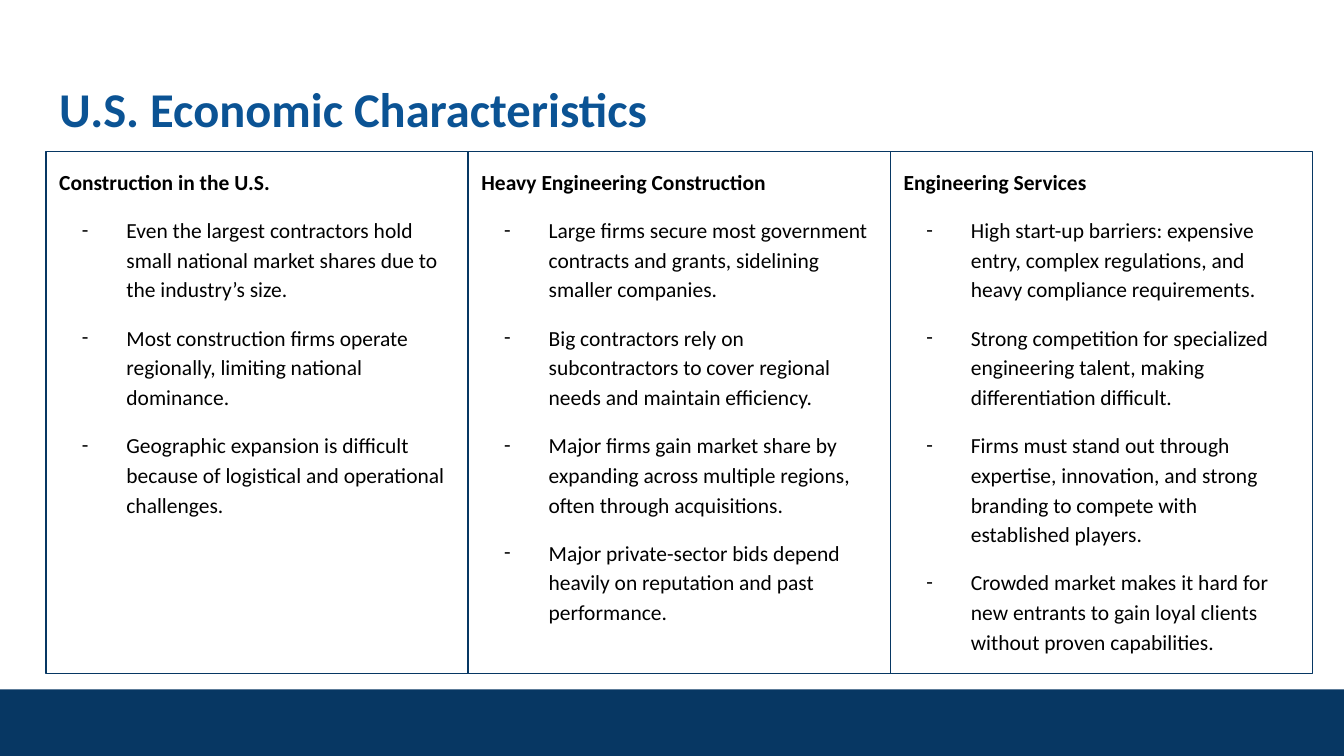
from lxml.etree import SubElement
from pptx import Presentation
from pptx.dml.color import RGBColor
from pptx.enum.shapes import MSO_SHAPE
from pptx.enum.text import MSO_ANCHOR
from pptx.oxml.ns import qn
from pptx.util import Cm, Pt

COLORS = {"title": "0B5394", "navy": "073763", "text": "000000"}
FONT = "Calibri"

COLUMNS = [
    ("Construction in the U.S.", [
        "Even the largest contractors hold small national market shares due to the industry’s size.",
        "Most construction firms operate regionally, limiting national dominance.",
        "Geographic expansion is difficult because of logistical and operational challenges.",
    ]),
    ("Heavy Engineering Construction", [
        "Large firms secure most government contracts and grants, sidelining smaller companies.",
        "Big contractors rely on subcontractors to cover regional needs and maintain efficiency.",
        "Major firms gain market share by expanding across multiple regions, often through acquisitions.",
        "Major private-sector bids depend heavily on reputation and past performance.",
    ]),
    ("Engineering Services", [
        "High start-up barriers: expensive entry, complex regulations, and heavy compliance requirements.",
        "Strong competition for specialized engineering talent, making differentiation difficult.",
        "Firms must stand out through expertise, innovation, and strong branding to compete with "
        "established players.",
        "Crowded market makes it hard for new entrants to gain loyal clients without proven capabilities.",
    ]),
]


class SlideBuilder:
    """Holds the style and the current slide; lengths are in centimetres."""

    def __init__(self, slide):
        self.slide = slide

    def color(self, name):
        return RGBColor.from_string(COLORS[name])

    def set_text(self, paragraph, text, size, color, bold=False):
        paragraph.text = text
        for run in paragraph.runs:
            run.font.name = FONT
            run.font.size = Pt(size)
            run.font.bold = bold
            run.font.color.rgb = self.color(color)

    def frame(self, left, top, width, height):
        box = self.slide.shapes.add_textbox(Cm(left), Cm(top), Cm(width), Cm(height))
        text = box.text_frame
        text.word_wrap = True
        text.vertical_anchor = MSO_ANCHOR.TOP
        text.margin_left = text.margin_right = Cm(0.25)
        text.margin_top = text.margin_bottom = Cm(0.25)
        return box

    def title(self, text, left, top, width, height):
        box = self.frame(left, top, width, height)
        self.set_text(box.text_frame.paragraphs[0], text, 26, "title", bold=True)

    def dash(self, paragraph):
        properties = paragraph._p.get_or_add_pPr()
        properties.set("marL", str(Cm(1.27)))
        properties.set("indent", str(Cm(-0.84)))
        bullet_color = SubElement(properties, qn("a:buClr"))
        SubElement(bullet_color, qn("a:srgbClr")).set("val", COLORS["text"])
        SubElement(properties, qn("a:buFont")).set("typeface", FONT)
        SubElement(properties, qn("a:buChar")).set("char", "-")

    def column(self, heading, points, left, top, width, height):
        box = self.frame(left, top, width, height)
        box.line.color.rgb = self.color("navy")
        box.line.width = Pt(0.75)
        first = box.text_frame.paragraphs[0]
        first.line_spacing = 1.15
        self.set_text(first, heading, 11.5, "text", bold=True)
        for point in points:
            paragraph = box.text_frame.add_paragraph()
            self.dash(paragraph)
            paragraph.line_spacing = 1.15
            paragraph.space_before = Pt(10)
            self.set_text(paragraph, point, 11.5, "text")

    def band(self, left, top, width, height):
        bar = self.slide.shapes.add_shape(
            MSO_SHAPE.RECTANGLE, Cm(left), Cm(top), Cm(width), Cm(height))
        bar.shadow.inherit = False
        bar.fill.solid()
        bar.fill.fore_color.rgb = self.color("navy")
        bar.line.fill.background()


def main():
    deck = Presentation()
    deck.slide_width, deck.slide_height = Cm(25.4), Cm(14.29)
    builder = SlideBuilder(deck.slides.add_slide(deck.slide_layouts[6]))

    # Title
    builder.title("U.S. Economic Characteristics", 0.87, 1.24, 23.67, 1.6)

    # Three adjoining columns
    left, width = 0.87, 7.98
    for index, (heading, points) in enumerate(COLUMNS):
        builder.column(heading, points, left + index * width, 2.87, width, 9.86)

    # Footer band
    builder.band(0, 13.03, 25.4, 1.26)

    deck.save("out.pptx")


if __name__ == "__main__":
    main()
